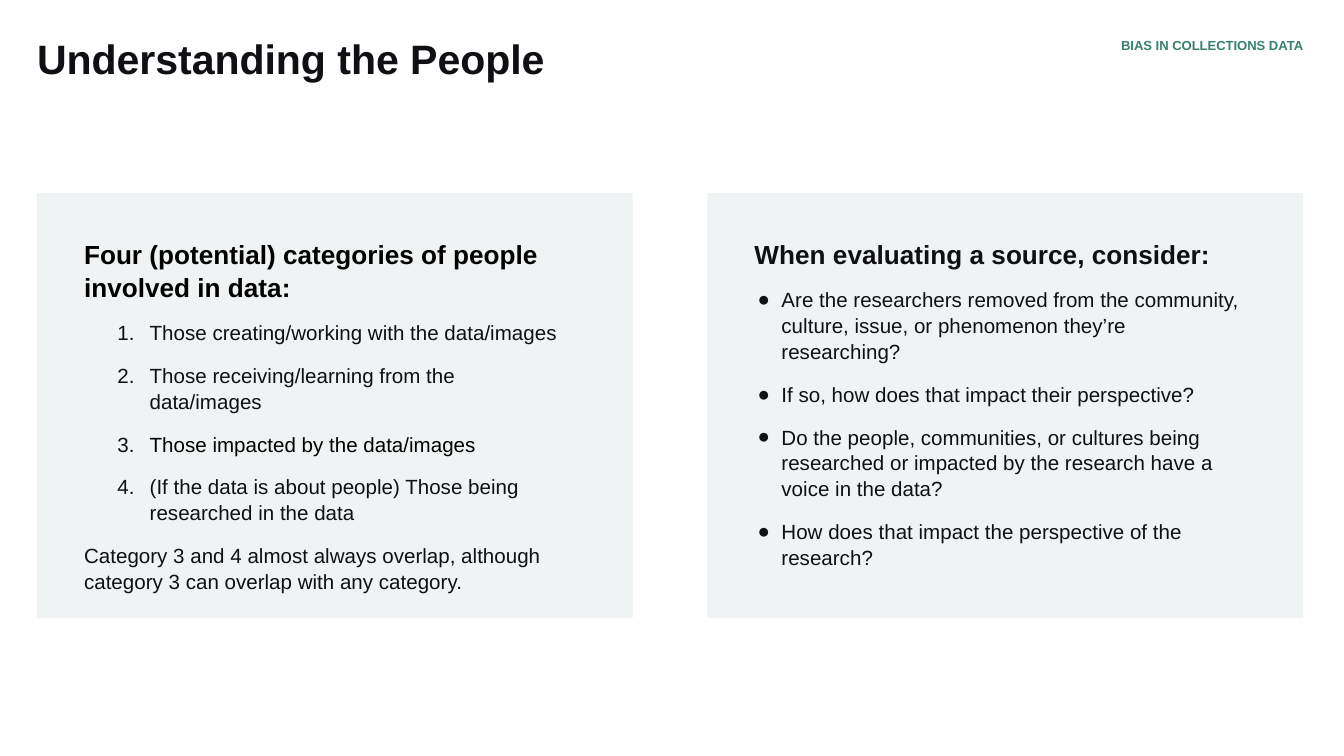
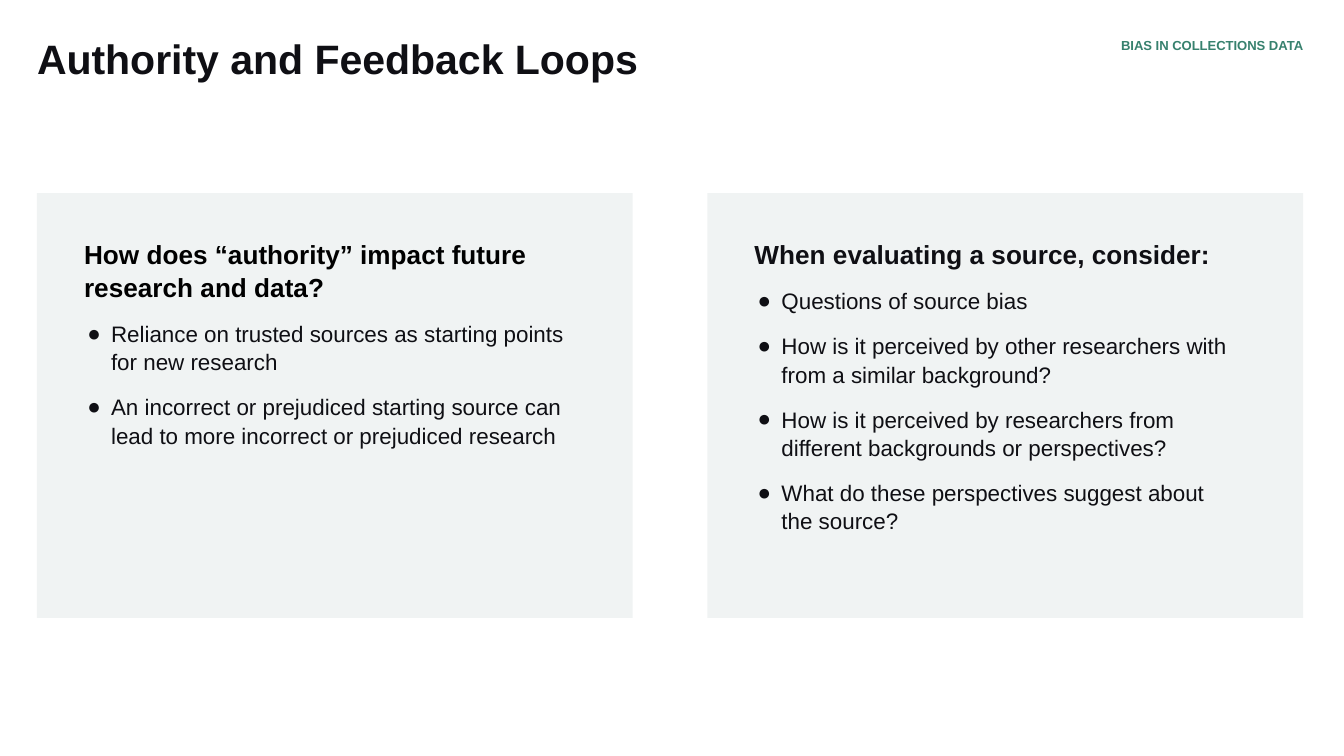
from lxml.etree import SubElement
from pptx import Presentation
from pptx.dml.color import RGBColor
from pptx.enum.shapes import MSO_SHAPE
from pptx.enum.text import MSO_ANCHOR, MSO_AUTO_SIZE, PP_ALIGN
from pptx.oxml.ns import qn
from pptx.util import Cm, Pt

INK = RGBColor(0x0F, 0x0F, 0x14)
BLACK = RGBColor(0x00, 0x00, 0x00)
GREEN = RGBColor(0x37, 0x81, 0x6E)
PANEL = RGBColor(0xF0, 0xF3, 0xF3)
FONT = "Arial"

# Layout in centimetres
MARGIN = 0.7
TOP = 0.74
COLUMN_W = 11.26
COLUMN_STEP = 12.67
PANEL_TOP, PANEL_H = 3.65, 8.03
TEXT_DX, TEXT_DY = 0.89, 0.57
TEXT_W, TEXT_H = 9.45, 6.5
INSET = 0.25

# Bullet kinds: left margin, hanging indent, tag, attributes
DOT = (0.51, -0.45, "a:buChar", {"char": "●"})
NUMBER = (1.24, -0.61, "a:buAutoNum", {"type": "arabicPeriod"})


class Deck:
    def __init__(self):
        self.prs = Presentation()
        self.prs.slide_width, self.prs.slide_height = Cm(25.4), Cm(14.29)
        self.s = None

    def slide(self, title):
        self.s = self.prs.slides.add_slide(self.prs.slide_layouts[5])
        sp = self.s.shapes.title
        sp.left, sp.top, sp.width, sp.height = Cm(MARGIN), Cm(TOP), Cm(20.3), Cm(1.5)
        tf = self.frame(sp, top=0)
        self.text(tf.paragraphs[0], title, 22, INK, bold=True, spacing=0.9)
        self.tag("BIAS IN COLLECTIONS DATA")

    def frame(self, sp, top=INSET, right=INSET):
        tf = sp.text_frame
        tf.word_wrap = True
        tf.auto_size = MSO_AUTO_SIZE.NONE
        tf.vertical_anchor = MSO_ANCHOR.TOP
        tf.margin_left, tf.margin_top = 0, Cm(top)
        tf.margin_right, tf.margin_bottom = Cm(right), Cm(INSET)
        return tf

    def text(self, p, text, size, color, bold=False, spacing=1.05, align=PP_ALIGN.LEFT):
        p.alignment = align
        p.line_spacing = spacing
        r = p.add_run()
        r.text = text
        r.font.name, r.font.size, r.font.bold = FONT, Pt(size), bold
        r.font.color.rgb = color

    def tag(self, text):
        sp = self.s.shapes.add_textbox(Cm(19.22), Cm(TOP), Cm(5.41), Cm(0.41))
        tf = self.frame(sp, top=0, right=0)
        self.text(tf.paragraphs[0], text, 7, GREEN, True, 0.9, PP_ALIGN.RIGHT)

    def bullet(self, p, kind):
        left, indent, tag, attributes = kind
        pPr = p._p.get_or_add_pPr()
        pPr.set("marL", str(Cm(left)))
        pPr.set("indent", str(Cm(indent)))
        color = SubElement(pPr, qn("a:buClr"))
        SubElement(color, qn("a:srgbClr"), val=str(INK))
        SubElement(pPr, qn("a:buFont"), typeface=FONT)
        SubElement(pPr, qn(tag), **attributes)

    def panel(self, column, heading, items, size, heading_color=INK, height=TEXT_H):
        """Shaded column with a heading and (text, bullet kind, colour) items."""
        left = MARGIN + column * COLUMN_STEP
        sp = self.s.shapes.add_shape(MSO_SHAPE.RECTANGLE, Cm(left), Cm(PANEL_TOP),
                                     Cm(COLUMN_W), Cm(PANEL_H))
        sp.shadow.inherit = False
        sp.fill.solid()
        sp.fill.fore_color.rgb = PANEL
        sp.line.fill.background()

        box = self.s.shapes.add_textbox(Cm(left + TEXT_DX), Cm(PANEL_TOP + TEXT_DY),
                                        Cm(TEXT_W), Cm(height))
        tf = self.frame(box)
        self.text(tf.paragraphs[0], heading, 14, heading_color, bold=True)
        for text, kind, color in items:
            p = tf.add_paragraph()
            if kind:
                self.bullet(p, kind)
            p.space_before = Pt(9)
            self.text(p, text, size, color)
        p.space_after = Pt(9)


def dots(*texts):
    return [(text, DOT, INK) for text in texts]


def main():
    deck = Deck()
    consider = "When evaluating a source, consider:"

    # People
    deck.slide("Understanding the People")
    deck.panel(1, consider, dots(
        "Are the researchers removed from the community, culture, issue, "
        "or phenomenon they’re researching?",
        "If so, how does that impact their perspective?",
        "Do the people, communities, or cultures being researched or impacted "
        "by the research have a voice in the data?",
        "How does that impact the perspective of the research?"), 11)
    deck.panel(0, "Four (potential) categories of people involved in data:", [
        ("Those creating/working with the data/images", NUMBER, INK),
        ("Those receiving/learning from the data/images", NUMBER, INK),
        ("Those impacted by the data/images", NUMBER, BLACK),
        ("(If the data is about people) Those being researched in the data", NUMBER, INK),
        ("Category 3 and 4 almost always overlap, although category 3 can overlap "
         "with any category.", None, INK)], 11, BLACK, height=7.04)

    # Authority
    deck.slide("Authority and Feedback Loops")
    deck.panel(1, consider, dots(
        "Questions of source bias",
        "How is it perceived by other researchers with from a similar background?",
        "How is it perceived by researchers from different backgrounds or perspectives?",
        "What do these perspectives suggest about the source?"), 12)
    deck.panel(0, "How does “authority” impact future research and data?", dots(
        "Reliance on trusted sources as starting points for new research",
        "An incorrect or prejudiced starting source can lead to more incorrect "
        "or prejudiced research"), 12, BLACK)

    deck.prs.save("out.pptx")


if __name__ == "__main__":
    main()
